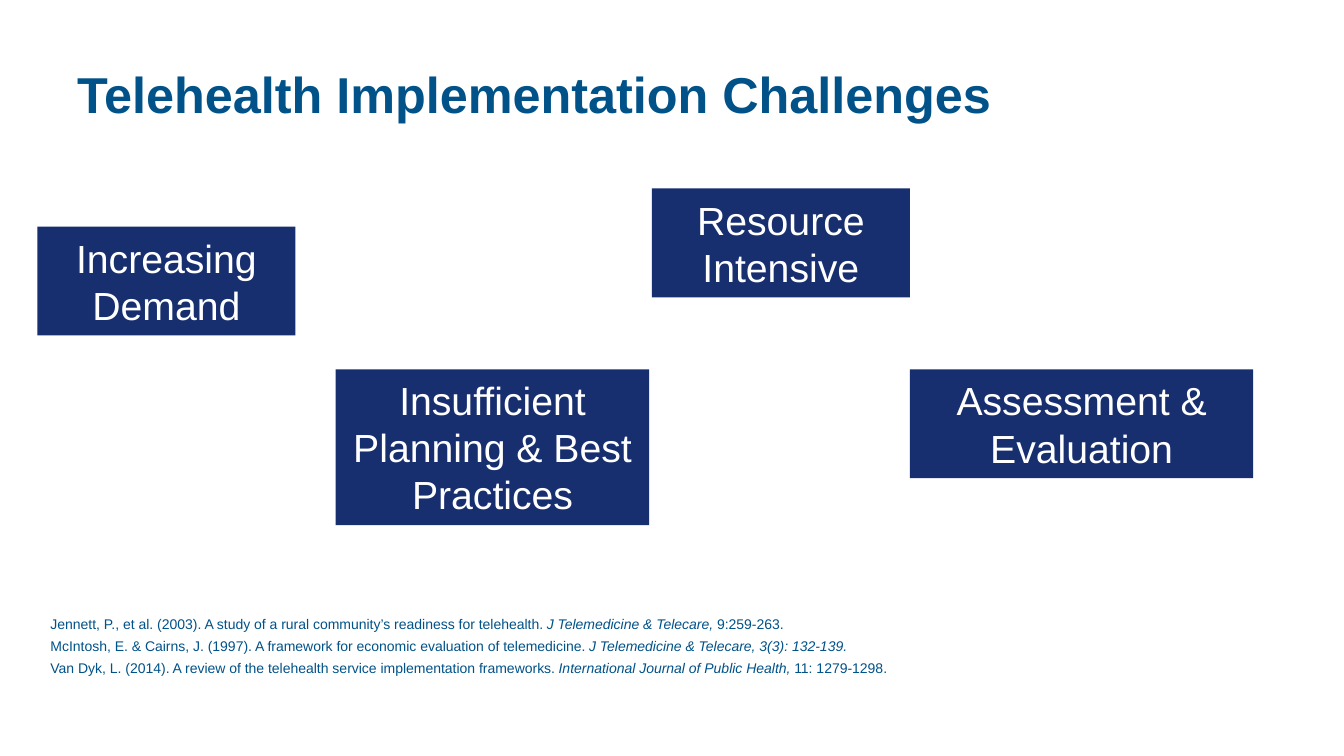
from dataclasses import dataclass

from pptx import Presentation
from pptx.dml.color import RGBColor
from pptx.enum.shapes import MSO_SHAPE
from pptx.enum.text import MSO_ANCHOR, PP_ALIGN
from pptx.util import Pt


@dataclass(frozen=True)
class Theme:
    """Hold the colours, type sizes and spacing of the slide."""
    face: str = "Arial"
    blue: RGBColor = RGBColor(0x00, 0x52, 0x88)
    navy: RGBColor = RGBColor(0x17, 0x2E, 0x6F)
    white: RGBColor = RGBColor(0xFF, 0xFF, 0xFF)
    title: float = 36
    label: float = 28
    cite: float = 10
    gap: float = 3.5
    side: float = 9.36
    edge: float = 5.04


class Board:
    """Draw titles, labels and citations on one slide."""

    def __init__(self, slide, theme):
        self.shapes = slide.shapes
        self.theme = theme

    def font(self, para, size, color, bold=False):
        """Set the font of a paragraph."""
        font = para.font
        font.name, font.size, font.bold = self.theme.face, Pt(size), bold
        font.color.rgb = color

    def inset(self, frame):
        """Wrap the text and set its margins."""
        frame.word_wrap = True
        frame.margin_left = frame.margin_right = Pt(self.theme.side)
        frame.margin_top = frame.margin_bottom = Pt(self.theme.edge)

    def title(self, text, *area):
        """Add the slide heading."""
        frame = self.shapes.add_textbox(*map(Pt, area)).text_frame
        frame.word_wrap = True
        frame.vertical_anchor = MSO_ANCHOR.MIDDLE
        para = frame.paragraphs[0]
        para.text = text
        self.font(para, self.theme.title, self.theme.blue, True)

    def label(self, text, *area):
        """Add a filled box with centred text."""
        box = self.shapes.add_shape(MSO_SHAPE.RECTANGLE, *map(Pt, area))
        box.shadow.inherit = False
        box.fill.solid()
        box.fill.fore_color.rgb = self.theme.navy
        box.line.fill.background()
        frame = box.text_frame
        self.inset(frame)
        frame.vertical_anchor = MSO_ANCHOR.MIDDLE
        para = frame.paragraphs[0]
        para.text = text
        para.alignment = PP_ALIGN.CENTER
        self.font(para, self.theme.label, self.theme.white)

    def cites(self, items, *area):
        """Add citations whose middle part is italic."""
        frame = self.shapes.add_textbox(*map(Pt, area)).text_frame
        self.inset(frame)
        for row, parts in enumerate(items):
            para = frame.add_paragraph() if row else frame.paragraphs[0]
            if row:
                para.space_before = Pt(self.theme.gap)
            self.font(para, self.theme.cite, self.theme.blue)
            for col, text in enumerate(parts):
                run = para.add_run()
                run.text = text
                run.font.italic = col == 1


LABELS = [
    ("Resource Intensive", 465.6, 134.6, 184.3, 77.8),
    ("Assessment & Evaluation", 650, 263.8, 245.2, 77.8),
    ("Insufficient Planning & Best Practices", 239.8, 263.8, 224, 111.4),
    ("Increasing Demand", 26.7, 161.8, 184.3, 77.8),
]

CITES = [
    ("Jennett, P., et al. (2003). A study of a rural community’s readiness for telehealth. ",
     "J Telemedicine & Telecare, ", "9:259-263."),
    ("McIntosh, E. & Cairns, J. (1997). A framework for economic evaluation of telemedicine. ",
     "J Telemedicine & Telecare, 3(3): 132-139."),
    ("Van Dyk, L. (2014). A review of the telehealth service implementation frameworks. ",
     "International Journal of Public Health, ", "11: 1279-1298."),
]


def main():
    """Build and save the slide."""
    deck = Presentation()
    deck.slide_width, deck.slide_height = Pt(960), Pt(540)
    board = Board(deck.slides.add_slide(deck.slide_layouts[6]), Theme())
    board.title("Telehealth Implementation Challenges", 48, 21.6, 864, 90)
    for item in LABELS:
        board.label(*item)
    board.cites(CITES, 26.7, 434.9, 836.6, 53.3)
    deck.save("out.pptx")


if __name__ == "__main__":
    main()
